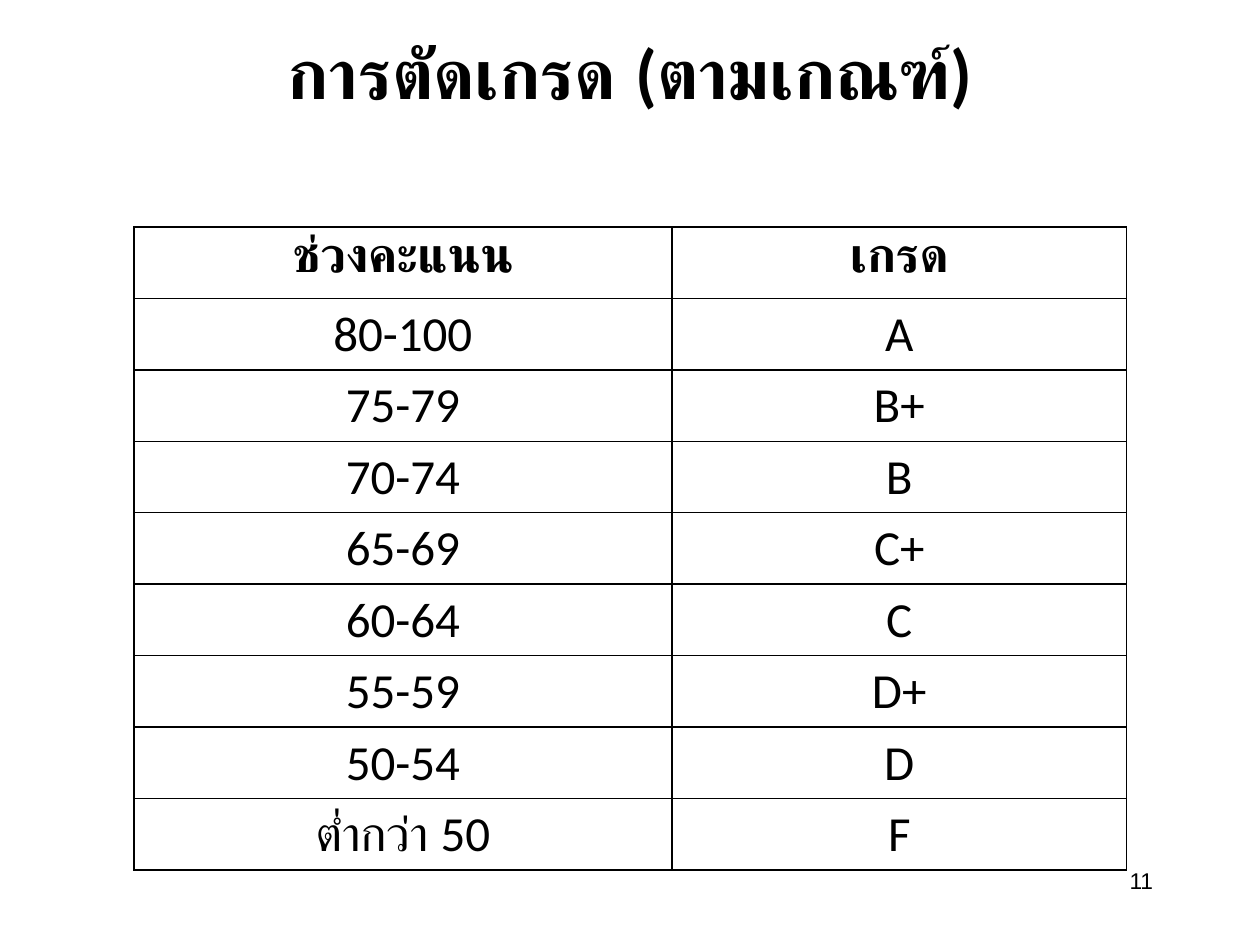
from dataclasses import dataclass

from lxml.etree import fromstring
from pptx import Presentation
from pptx.dml.color import RGBColor
from pptx.enum.text import MSO_ANCHOR, PP_ALIGN
from pptx.oxml.ns import nsdecls
from pptx.slide import Slide
from pptx.table import _Cell
from pptx.text.text import TextFrame
from pptx.util import Pt


@dataclass(frozen=True)
class Theme:
    ink: str = "000000"
    font: str = "Calibri"
    number_font: str = "Arial"
    title_size: float = 40
    table_size: float = 28
    number_size: float = 13
    border_width: float = 1


@dataclass(frozen=True)
class Box:
    left: float
    top: float
    width: float
    height: float

    def lengths(self) -> tuple:
        return Pt(self.left), Pt(self.top), Pt(self.width), Pt(self.height)


@dataclass(frozen=True)
class GradeBand:
    scores: str
    grade: str


THEME = Theme()
TITLE_BOX = Box(0, 5, 720, 72)
NUMBER_BOX = Box(516, 492, 150, 36)
TABLE_LEFT, TABLE_TOP, ROW_HEIGHT = 76.5, 129.6, 39.6
COLUMN_WIDTHS = (307.4, 259.9)
HEADER = GradeBand("ช่วงคะแนน", "เกรด")
BANDS = (
    GradeBand("80-100", "A"),
    GradeBand("75-79", "B+"),
    GradeBand("70-74", "B"),
    GradeBand("65-69", "C+"),
    GradeBand("60-64", "C"),
    GradeBand("55-59", "D+"),
    GradeBand("50-54", "D"),
    GradeBand("ต่ำกว่า 50", "F"),
)


def write_text(frame: TextFrame, text: str, *, size: float, font: str = THEME.font,
               bold: bool = False, align: PP_ALIGN = PP_ALIGN.CENTER) -> None:
    frame.word_wrap = True
    paragraph = frame.paragraphs[0]
    paragraph.alignment = align
    run = paragraph.add_run()
    run.text = text
    run.font.name = font
    run.font.size = Pt(size)
    run.font.bold = bold
    run.font.color.rgb = RGBColor.from_string(THEME.ink)


def draw_borders(cell: _Cell) -> None:
    properties = cell._tc.get_or_add_tcPr()
    for position, side in enumerate(("lnL", "lnR", "lnT", "lnB")):
        properties.insert(position, fromstring(
            f'<a:{side} {nsdecls("a")} w="{Pt(THEME.border_width)}"><a:solidFill>'
            f'<a:srgbClr val="{THEME.ink}"/></a:solidFill></a:{side}>'))


def draw_title(slide: Slide, text: str) -> None:
    title = slide.shapes.title
    title.left, title.top, title.width, title.height = TITLE_BOX.lengths()
    title.text_frame.vertical_anchor = MSO_ANCHOR.MIDDLE
    write_text(title.text_frame, text, size=THEME.title_size, bold=True)


def draw_grade_table(slide: Slide, bands: tuple[GradeBand, ...]) -> None:
    rows = (HEADER, *bands)
    box = Box(TABLE_LEFT, TABLE_TOP, sum(COLUMN_WIDTHS), ROW_HEIGHT * len(rows))
    table = slide.shapes.add_table(len(rows), len(COLUMN_WIDTHS), *box.lengths()).table
    table.first_row = table.horz_banding = False
    for column, width in zip(table.columns, COLUMN_WIDTHS):
        column.width = Pt(width)
    for row, band in zip(table.rows, rows):
        row.height = Pt(ROW_HEIGHT)
        for cell, text in zip(row.cells, (band.scores, band.grade)):
            cell.fill.background()
            draw_borders(cell)
            write_text(cell.text_frame, text, size=THEME.table_size, bold=band is HEADER)


def draw_slide_number(slide: Slide, number: str) -> None:
    shape = slide.shapes.add_textbox(*NUMBER_BOX.lengths())
    write_text(shape.text_frame, number, size=THEME.number_size,
               font=THEME.number_font, align=PP_ALIGN.RIGHT)


def main() -> None:
    """Build the slide that lists the grade for each score range."""
    presentation = Presentation()
    presentation.slide_width, presentation.slide_height = Pt(720), Pt(540)
    slide = presentation.slides.add_slide(presentation.slide_layouts[5])
    draw_slide_number(slide, "11")
    draw_title(slide, "การตัดเกรด (ตามเกณฑ์)")
    draw_grade_table(slide, BANDS)
    presentation.save("out.pptx")


if __name__ == "__main__":
    main()
